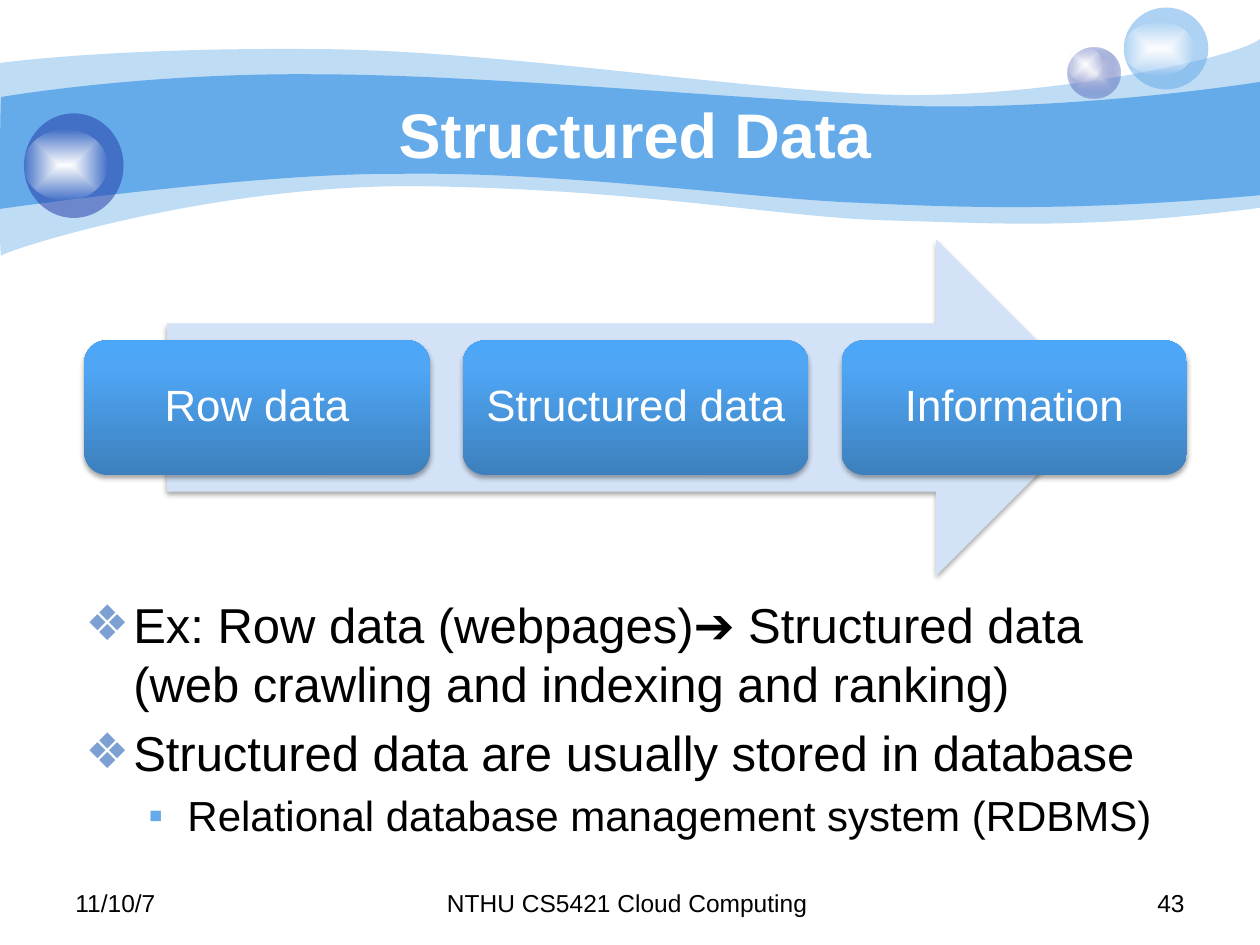
from lxml.etree import SubElement
from pptx import Presentation
from pptx.dml.color import RGBColor
from pptx.enum.shapes import MSO_SHAPE
from pptx.enum.text import MSO_ANCHOR, PP_ALIGN
from pptx.oxml import parse_xml
from pptx.oxml.ns import nsdecls, qn
from pptx.util import Inches, Pt

COLORS = {
    "sky": "65AAE9", "navy": "233DA9", "lilac": "E1E2ED", "white": "FFFFFF",
    "black": "000000", "arrow": "D3E2F7", "card_low": "3D80BD",
    "card_mid": "4FA6F5", "card_top": "4CA7F9", "diamond": "7DA0D3",
}
FONT = "Arial"
PALE_WAVE = [
    [(0, 0.5)],
    [(0.24, 0.47), (1.07, 0.38), (2.47, 0.39)],
    [(3.86, 0.39), (5.75, 0.7), (6.99, 0.75)],
    [(8.22, 0.8), (9.8, 0.47), (10, 0.31)],
    [(10, 1.65)],
    [(8.58, 1.83), (7.87, 1.77), (7.05, 1.75)],
    [(6.22, 1.73), (5.15, 1.51), (3.43, 1.48)],
    [(1.72, 1.44), (0.04, 1.99), (0.01, 2.03)],
    [(-0.01, 2.08), (0, 0.75), (0, 0.5)],
]
DEEP_WAVE = [
    [(0.01, 0.77)],
    [(0.02, 0.77), (1.1, 0.58), (2.48, 0.59)],
    [(3.86, 0.59), (5.95, 0.8), (7.18, 0.84)],
    [(8.41, 0.88), (9.76, 0.69), (10, 0.65)],
    [(10, 1.55)],
    [(8.53, 1.68), (7.65, 1.65), (6.82, 1.61)],
    [(5.99, 1.58), (4.47, 1.36), (3.17, 1.38)],
    [(2.03, 1.37), (-0.02, 1.66), (-0.01, 1.66)],
    [(0, 1.66), (0, 0.77), (0.01, 0.77)],
]


def color_xml(name, opacity=100):
    return f'<a:srgbClr val="{COLORS[name]}"><a:alpha val="{opacity * 1000}"/></a:srgbClr>'


def solid(name, opacity=100):
    return f'<a:solidFill {nsdecls("a")}>{color_xml(name, opacity)}</a:solidFill>'


def gradient(stops, angle=None):
    marks = "".join(f'<a:gs pos="{place * 1000}">{color_xml(*color)}</a:gs>'
                    for place, *color in stops)
    if angle is None:
        course = ('<a:path path="shape"><a:fillToRect l="50000" t="50000" '
                  'r="50000" b="50000"/></a:path>')
    else:
        course = f'<a:lin ang="{angle * 60000}" scaled="0"/>'
    return f'<a:gradFill {nsdecls("a")}><a:gsLst>{marks}</a:gsLst>{course}</a:gradFill>'


GLOSS = gradient([(0, "white"), (100, "white", 0)])
CARD_FILL = gradient([(0, "card_low"), (80, "card_mid"), (100, "card_top")], 270)


def paint(shape, fill_xml, shadow=False):
    shape.shadow.inherit = False
    shape.line.fill.background()
    shape.fill.background()
    properties = shape.element.spPr
    properties.replace(properties.find(qn("a:noFill")), parse_xml(fill_xml))
    if shadow:
        properties.find(qn("a:effectLst")).append(parse_xml(
            f'<a:outerShdw {nsdecls("a")} blurRad="{Pt(3.1)}" dist="{Pt(1.8)}" '
            f'dir="5400000" rotWithShape="0">{color_xml("black", 35)}</a:outerShdw>'))


def add_shape(page, kind, box, fill_xml, shadow=False):
    shape = page.shapes.add_shape(kind, *map(Inches, box))
    paint(shape, fill_xml, shadow)
    return shape


def write(para, text, size, color="black", bold=False, align=PP_ALIGN.LEFT):
    para.alignment = align
    span = para.add_run()
    span.text = text
    span.font.name = FONT
    span.font.size = Pt(size)
    span.font.bold = bold
    span.font.color.rgb = RGBColor.from_string(COLORS[color])


def add_text_box(page, box):
    frame = page.shapes.add_textbox(*map(Inches, box)).text_frame
    frame.word_wrap = True
    return frame


def add_wave(page, box, outline, fill_xml):
    left, top, width, height = map(Inches, box)
    builder = page.shapes.build_freeform(0, 0)
    builder.add_line_segments([(width, 0), (width, height)])
    wave = builder.convert_to_shape()
    wave.left, wave.top, wave.width, wave.height = left, top, width, height
    route = next(wave.element.iter(qn("a:path")))
    for segment in list(route):
        route.remove(segment)
    route.set("w", str(width))
    route.set("h", str(height))
    for index, points in enumerate(outline):
        kind = "moveTo" if index == 0 else "lnTo" if len(points) == 1 else "cubicBezTo"
        segment = SubElement(route, qn(f"a:{kind}"))
        for x, y in points:
            corner = SubElement(segment, qn("a:pt"))
            corner.set("x", str(Inches(x) - left))
            corner.set("y", str(Inches(y) - top))
    SubElement(route, qn("a:close"))
    paint(wave, fill_xml)


def add_bubble(page, box, fill_xml, gloss_box):
    add_shape(page, MSO_SHAPE.OVAL, box, fill_xml)
    add_shape(page, MSO_SHAPE.OVAL, gloss_box, GLOSS)


def add_banner(page):
    add_wave(page, (-0.01, 0.31, 10.01, 1.77), PALE_WAVE, solid("sky", 41))
    add_wave(page, (-0.02, 0.58, 10.02, 1.1), DEEP_WAVE, solid("sky"))
    add_bubble(page, (8.47, 0.38, 0.42, 0.4),
               gradient([(0, "lilac"), (100, "navy", 31)]), (8.47, 0.38, 0.28, 0.27))
    add_bubble(page, (8.92, 0.06, 0.67, 0.65), solid("sky", 53), (8.92, 0.17, 0.56, 0.43))
    add_bubble(page, (0.19, 0.9, 0.79, 0.83), solid("navy", 53), (0.19, 1.03, 0.66, 0.56))


def add_title(page, box, text):
    title = page.shapes.title
    title.left, title.top, title.width, title.height = map(Inches, box)
    title.element.getparent().append(title.element)
    frame = title.text_frame
    frame.word_wrap = True
    frame.vertical_anchor = MSO_ANCHOR.MIDDLE
    write(frame.paragraphs[0], text, 36, "white", bold=True, align=PP_ALIGN.CENTER)


def add_process(page, box, labels):
    left, top, width, height = box
    arrow_width = width * 0.85
    add_shape(page, MSO_SHAPE.RIGHT_ARROW,
              (left + (width - arrow_width) / 2, top, arrow_width, height),
              solid("arrow"), shadow=True)
    card_width, card_height = 2.74, height * 0.4
    pitch = (width - card_width) / (len(labels) - 1)
    for index, label in enumerate(labels):
        card = add_shape(page, MSO_SHAPE.ROUNDED_RECTANGLE,
                         (left + index * pitch, top + (height - card_height) / 2,
                          card_width, card_height), CARD_FILL, shadow=True)
        frame = card.text_frame
        frame.word_wrap = True
        frame.vertical_anchor = MSO_ANCHOR.MIDDLE
        para = frame.paragraphs[0]
        para.line_spacing = 0.9
        write(para, label, 25, "white", align=PP_ALIGN.CENTER)


def add_bullet(para, level, symbol, color, margin, hang):
    para.level = level
    properties = para._p.get_or_add_pPr()
    properties.set("marL", str(Inches(margin)))
    properties.set("indent", str(Inches(-hang)))
    SubElement(SubElement(properties, qn("a:buClr")), qn("a:srgbClr")).set("val", COLORS[color])
    SubElement(properties, qn("a:buFont")).set("typeface", FONT)
    SubElement(properties, qn("a:buChar")).set("char", symbol)


def add_body(page, box, items):
    styles = [("❖", "diamond", 0.38, 0.38, 28), ("▪", "sky", 0.81, 0.31, 24)]
    frame = add_text_box(page, box)
    for index, (level, text) in enumerate(items):
        para = frame.add_paragraph() if index else frame.paragraphs[0]
        *bullet, size = styles[level]
        add_bullet(para, level, *bullet)
        if index:
            para.space_before = Pt(size * 0.2)
        write(para, text, size)


def add_footer(page, top, height):
    for left, width, text, align in [
        (0.5, 2.33, "11/10/7", PP_ALIGN.LEFT),
        (3.42, 3.17, "NTHU CS5421 Cloud Computing ", PP_ALIGN.CENTER),
        (7.17, 2.33, "43", PP_ALIGN.RIGHT),
    ]:
        frame = add_text_box(page, (left, top, width, height))
        write(frame.paragraphs[0], text, 14, align=align)


def main():
    deck = Presentation()
    deck.slide_width, deck.slide_height = Inches(10), Inches(7.5)
    page = deck.slides.add_slide(deck.slide_layouts[5])
    add_banner(page)
    add_title(page, (1, 0.75, 8.08, 0.62), "Structured Data")
    add_body(page, (0.58, 4.67, 9, 2.25), [
        (0, "Ex: Row data (webpages)➔ Structured data (web crawling and indexing and ranking)"),
        (0, "Structured data are usually stored in database"),
        (1, "Relational database management system (RDBMS)"),
    ])
    add_process(page, (0.67, 1.9, 8.75, 2.67), ["Row data", "Structured data", "Information"])
    add_footer(page, 7, 0.35)
    deck.save("out.pptx")


if __name__ == "__main__":
    main()
